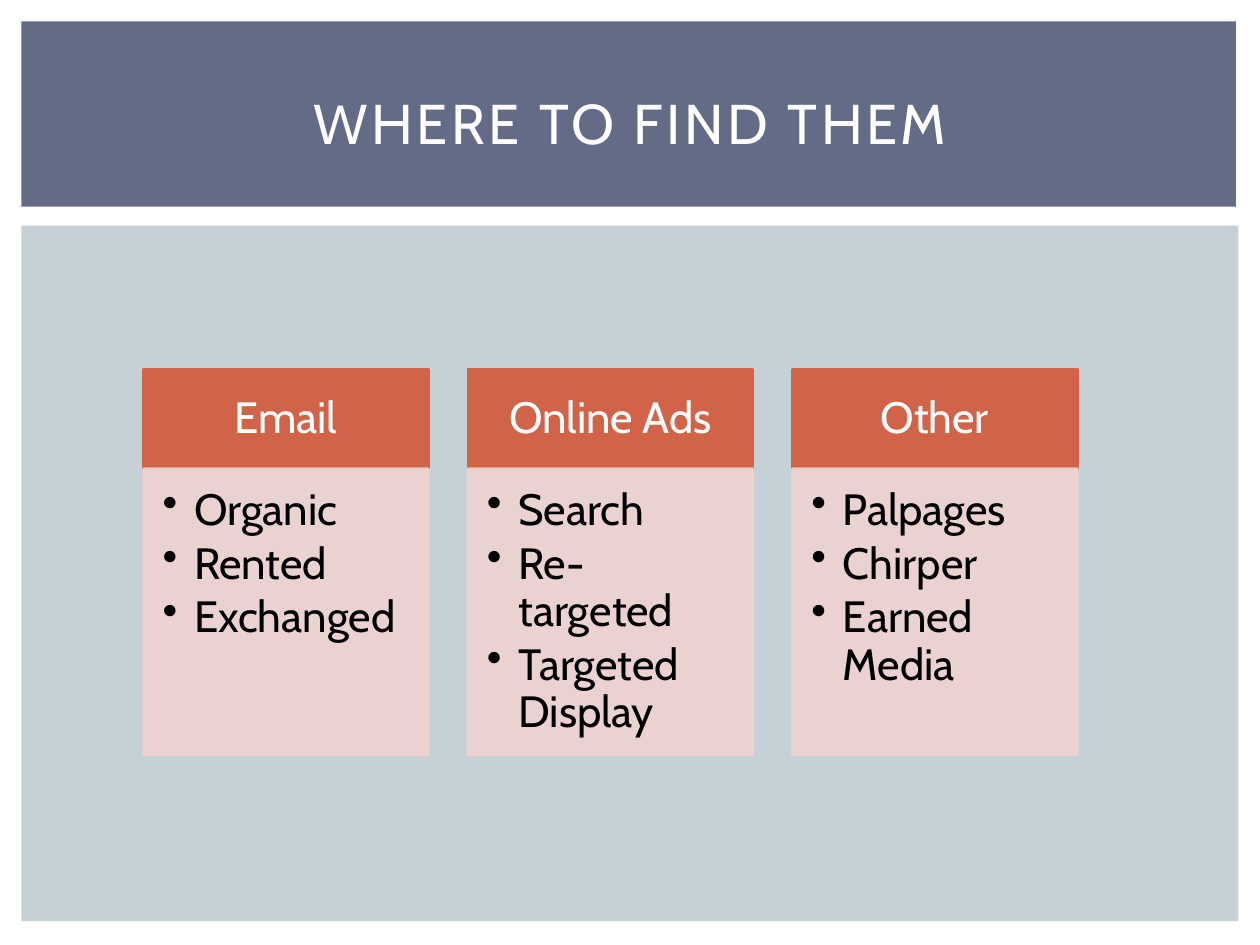
"""Build a slide with a title band and three headed lists."""
from lxml.etree import SubElement
from pptx import Presentation
from pptx.dml.color import RGBColor
from pptx.enum.shapes import MSO_SHAPE
from pptx.enum.text import MSO_ANCHOR, PP_ALIGN
from pptx.oxml.ns import qn
from pptx.util import Inches, Pt

TITLE = "WHERE TO FIND THEM"
LISTS = [
    ("Email", ["Organic", "Rented", "Exchanged"]),
    ("Online Ads", ["Search", "Re-targeted", "Targeted Display"]),
    ("Other", ["Palpages", "Chirper", "Earned Media"]),
]

THEME = {
    "font": "Cabin", "title_size": 32, "list_size": 25, "line": 1.5,
    "panel": "C5D1D7", "band": "646B86", "head": "D16349", "body": "EED3D0",
    "light": "FFFFFF", "dark": "000000", "body_alpha": 90,
}
SIDES = ("margin_left", "margin_top", "margin_right", "margin_bottom")
HEAD_FRAME = dict(zip(SIDES, map(Inches, (0.19, 0.11, 0.19, 0.11))),
                  vertical_anchor=MSO_ANCHOR.MIDDLE, word_wrap=True)
BODY_FRAME = dict(zip(SIDES, map(Inches, (0.15, 0.15, 0.19, 0.22))),
                  vertical_anchor=MSO_ANCHOR.TOP, word_wrap=True)
TITLE_FRAME = {"vertical_anchor": MSO_ANCHOR.MIDDLE, "word_wrap": True}
HEAD_PARA = {"alignment": PP_ALIGN.CENTER, "line_spacing": 0.9}
BODY_PARA = {"alignment": PP_ALIGN.LEFT, "line_spacing": 0.9,
             "space_after": Pt(3.75), "level": 1}
TITLE_PARA = {"alignment": PP_ALIGN.CENTER}

WIDTH, HEIGHT = 10, 7.5
LEFT, TOP, COL_W, PITCH = 1.14, 2.93, 2.26, 2.575
HEAD_H, BODY_H, INDENT = 0.79, 2.27, 0.25


def apply(target, values):
    for name, value in values.items():
        setattr(target, name, value)


def add_box(s, at, color, outlined=False, alpha=None):
    sp = s.shapes.add_shape(MSO_SHAPE.RECTANGLE, *map(Inches, at))
    sp.shadow.inherit = False
    sp.fill.solid()
    sp.fill.fore_color.rgb = RGBColor.from_string(THEME[color])
    if outlined:
        sp.line.color.rgb = RGBColor.from_string(THEME[color])
        sp.line.width = Pt(THEME["line"])
    else:
        sp.line.fill.background()
    if alpha:
        for clr in sp._element.spPr.iter(qn("a:srgbClr")):
            SubElement(clr, qn("a:alpha"), val=str(alpha * 1000))
    return sp


def write(sp, lines, frame, para, color, size="list_size"):
    tf = sp.text_frame
    apply(tf, frame)
    tf.text = "\n".join(lines)
    for p in tf.paragraphs:
        apply(p, para)
        r = p.runs[0]
        apply(r.font, {"name": THEME["font"], "size": Pt(THEME[size])})
        r.font.color.rgb = RGBColor.from_string(THEME[color])
    return tf


def add_bullets(tf):
    for p in tf.paragraphs:
        pPr = p._p.get_or_add_pPr()
        pPr.set("marL", str(Inches(INDENT)))
        pPr.set("indent", str(-Inches(INDENT)))
        SubElement(pPr, qn("a:buChar"), char="•")


def main():
    prs = Presentation()
    prs.slide_width, prs.slide_height = Inches(WIDTH), Inches(HEIGHT)
    s = prs.slides.add_slide(prs.slide_layouts[6])

    add_box(s, (0.17, 1.79, 9.66, 5.52), "panel")
    add_box(s, (0.17, 0.17, 9.64, 1.47), "band")
    title = s.shapes.add_textbox(*map(Inches, (0.42, 0.39, 9.17, 1.15)))
    tf = write(title, [TITLE], TITLE_FRAME, TITLE_PARA, "light", "title_size")
    tf.paragraphs[0].runs[0].font._element.set("spc", "200")

    for col, (head, items) in enumerate(LISTS):
        x = LEFT + col * PITCH
        sp = add_box(s, (x, TOP, COL_W, HEAD_H), "head", outlined=True)
        write(sp, [head], HEAD_FRAME, HEAD_PARA, "light")
        sp = add_box(s, (x, TOP + HEAD_H, COL_W, BODY_H), "body",
                     outlined=True, alpha=THEME["body_alpha"])
        add_bullets(write(sp, items, BODY_FRAME, BODY_PARA, "dark"))

    prs.save("out.pptx")


if __name__ == "__main__":
    main()
